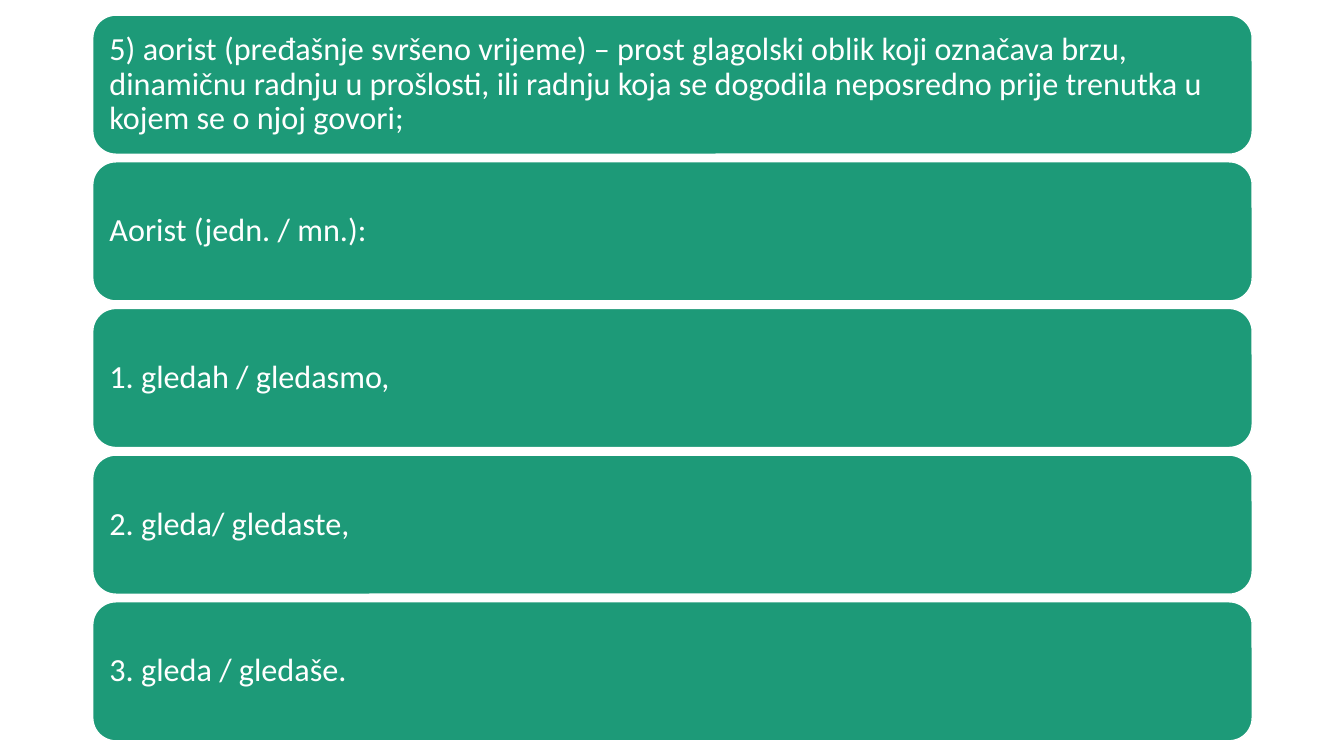
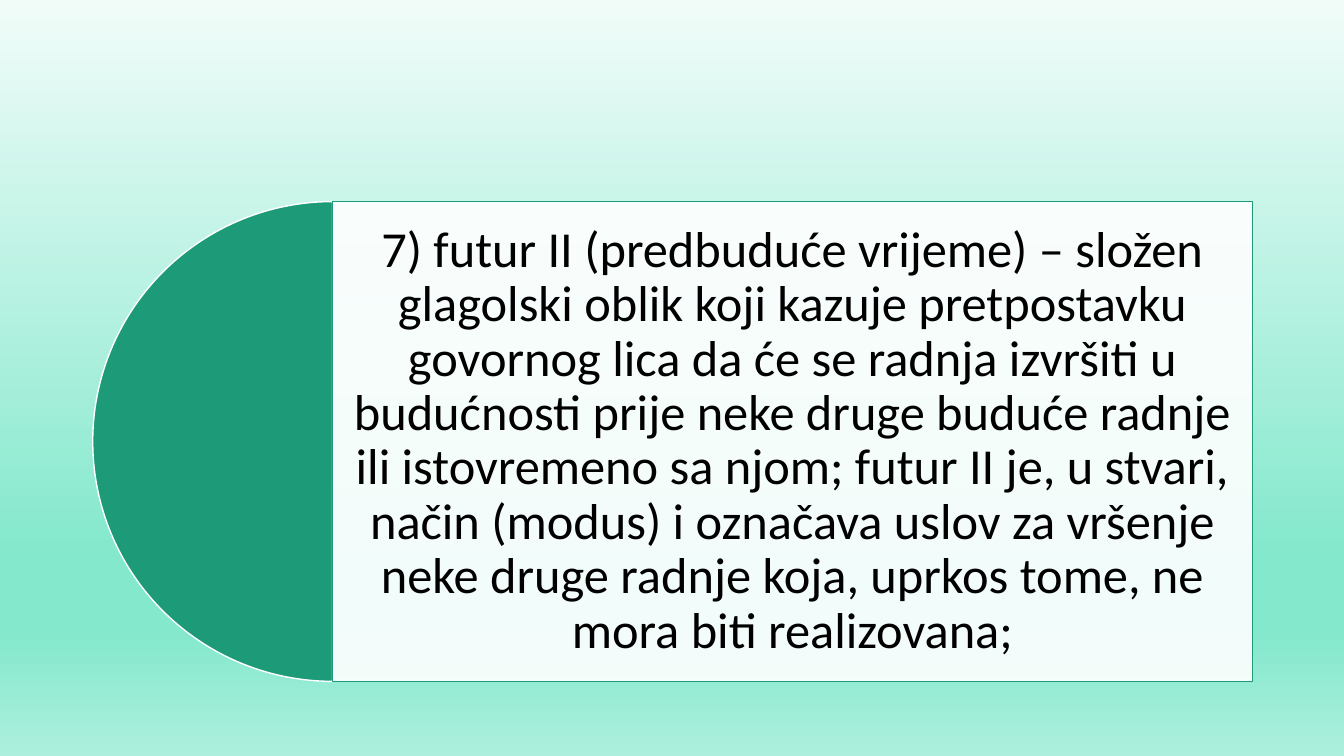
import pptx
import pptx.dml.color
import pptx.enum.shapes
import pptx.enum.text
import pptx.oxml.ns
import pptx.util
from lxml import etree

Inches = pptx.util.Inches
SHAPES = pptx.enum.shapes.MSO_SHAPE
ALIGN = pptx.enum.text.PP_ALIGN

AORIST = [
    "5) aorist (pređašnje svršeno vrijeme) – prost glagolski oblik koji označava brzu, "
    "dinamičnu radnju u prošlosti, ili radnju koja se dogodila neposredno prije trenutka "
    "u kojem se o njoj govori;",
    "Aorist (jedn. / mn.):",
    "1. gledah / gledasmo,",
    "2. gleda/ gledaste,",
    "3. gleda / gledaše.",
]
FUTUR = (
    "7) futur II (predbuduće vrijeme) – složen glagolski oblik koji kazuje pretpostavku "
    "govornog lica da će se radnja izvršiti u budućnosti prije neke druge buduće radnje "
    "ili istovremeno sa njom; futur II je, u stvari, način (modus) i označava uslov za "
    "vršenje neke druge radnje koja, uprkos tome, ne mora biti realizovana;"
)

GREEN, WHITE, BLACK = "1D9A78", "FFFFFF", "000000"
BACKDROP = [(0, "F1FCF9"), (74, "83E8CC"), (83, "83E8CC"), (100, "ACEFDD")]
LEFT, WIDTH = 0.92, 11.5
BAR_TOP, BAR_HEIGHT, BAR_STEP = 0.15, 1.38, 1.455
PIE_TOP, PIE_SIZE = 2, 4.76

BAR_TEXT = {"size": 23, "color": WHITE, "inset": 0.1, "align": ALIGN.LEFT}
PANEL_TEXT = {"size": 36, "color": BLACK, "inset": 0.15, "align": ALIGN.CENTER}


def rgb(code):
    return pptx.dml.color.RGBColor.from_string(code)


def add_block(slide, kind, box, fill, line):
    block = slide.shapes.add_shape(kind, *map(Inches, box))
    block.shadow.inherit = False
    block.fill.solid()
    block.fill.fore_color.rgb = rgb(fill)
    block.line.color.rgb = rgb(line)
    block.line.width = pptx.util.Pt(1)
    return block


def write(block, words, style):
    frame = block.text_frame
    inset = Inches(style["inset"])
    frame_format = {
        "word_wrap": True,
        "vertical_anchor": pptx.enum.text.MSO_ANCHOR.MIDDLE,
        "margin_left": inset,
        "margin_right": inset,
        "margin_top": inset,
        "margin_bottom": inset,
    }
    paragraph = frame.paragraphs[0]
    paragraph_format = {"text": words, "alignment": style["align"], "line_spacing": 0.9}
    font_format = {"name": "Calibri", "size": pptx.util.Pt(style["size"])}
    for target, values in (
        (frame, frame_format),
        (paragraph, paragraph_format),
        (paragraph.font, font_format),
    ):
        for key, value in values.items():
            setattr(target, key, value)
    paragraph.font.color.rgb = rgb(style["color"])


def set_opacity(block, percent):
    color = block.element.spPr.find(pptx.oxml.ns.qn("a:solidFill"))[0]
    etree.SubElement(color, pptx.oxml.ns.qn("a:alpha"), val=str(percent * 1000))


def paint_backdrop(slide, stops):
    fill = slide.background.fill
    fill.gradient()
    fill.gradient_angle = 270
    stop_list = next(slide.element.iter(pptx.oxml.ns.qn("a:gsLst")))
    for old_stop in list(stop_list):
        stop_list.remove(old_stop)
    for position, code in stops:
        stop = etree.SubElement(stop_list, pptx.oxml.ns.qn("a:gs"), pos=str(position * 1000))
        etree.SubElement(stop, pptx.oxml.ns.qn("a:srgbClr"), val=code)


def build_aorist(slide):
    for index, words in enumerate(AORIST):
        box = (LEFT, BAR_TOP + index * BAR_STEP, WIDTH, BAR_HEIGHT)
        bar = add_block(slide, SHAPES.ROUNDED_RECTANGLE, box, GREEN, WHITE)
        write(bar, words, BAR_TEXT)


def build_futur(slide):
    paint_backdrop(slide, BACKDROP)
    radius = PIE_SIZE / 2
    pie_box = (LEFT, PIE_TOP, PIE_SIZE, PIE_SIZE)
    half_circle = add_block(slide, SHAPES.PIE, pie_box, GREEN, WHITE)
    half_circle.adjustments[0] = 54
    half_circle.adjustments[1] = 162
    panel_box = (LEFT + radius, PIE_TOP, WIDTH - radius, PIE_SIZE)
    panel = add_block(slide, SHAPES.RECTANGLE, panel_box, WHITE, GREEN)
    set_opacity(panel, 90)
    write(panel, FUTUR, PANEL_TEXT)


def main():
    deck = pptx.Presentation()
    deck.slide_width, deck.slide_height = Inches(13.33), Inches(7.5)
    for build in (build_aorist, build_futur):
        build(deck.slides.add_slide(deck.slide_layouts[6]))
    deck.save("out.pptx")


if __name__ == "__main__":
    main()
